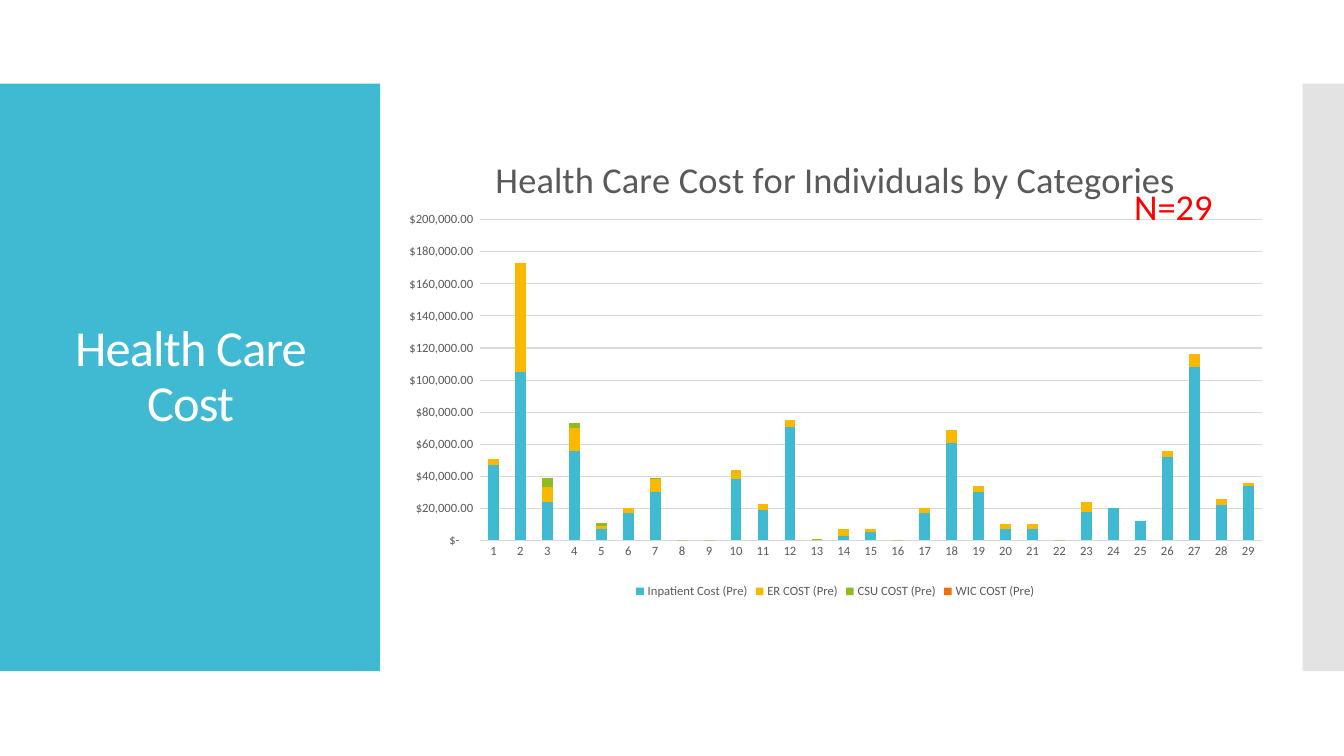
from lxml import etree
from pptx import Presentation
from pptx.chart.data import CategoryChartData
from pptx.dml.color import RGBColor
from pptx.enum.chart import XL_CHART_TYPE as CT, XL_LEGEND_POSITION as LP, XL_TICK_MARK as TM
from pptx.enum.shapes import MSO_SHAPE
from pptx.enum.text import MSO_ANCHOR, MSO_AUTO_SIZE, PP_ALIGN
from pptx.oxml.ns import qn
from pptx.util import Inches, Pt

COLORS = {
    "teal": "40BAD2", "amber": "FAB900", "green": "90BB23", "orange": "EE7008",
    "grey": "C8C8C8", "grid": "D9D9D9", "text": "595959", "red": "FF0000", "white": "FFFFFF",
}
FONT = "Calibri"
MONEY = r'_("$"* #,##0.00_);_("$"* \(#,##0.00\);_("$"* "-"??_);_(@_)'
PEOPLE = 29
INPATIENT = [47, 105, 24, 56, 7, 17, 30, 0, 0, 38, 19, 71, 0, 3, 5, 0, 17, 61, 30,
             7, 7, 0, 18, 20, 12, 52, 108, 22, 34]
EMERGENCY = [4, 68, 9, 14, 2, 3, 8, 0, 0, 6, 4, 4, 0, 4, 2, 0, 3, 8, 4,
             3, 3, 0, 6, 0, 0, 4, 8, 4, 2]
CRISIS_UNIT = {3: 6, 4: 3, 5: 2, 7: 1, 13: 1}
COSTS = [
    ("Inpatient Cost (Pre)", "teal", INPATIENT),
    ("ER COST (Pre)", "amber", EMERGENCY),
    ("CSU COST (Pre)", "green", [CRISIS_UNIT.get(n, 0) for n in range(1, PEOPLE + 1)]),
    ("WIC COST (Pre)", "orange", [0] * PEOPLE),
]


def rgb(name):
    return RGBColor.from_string(COLORS[name])


def style_font(font, size, color):
    font.name, font.size, font.bold = FONT, Pt(size), False
    font.color.rgb = rgb(color)


def add_panel(slide, left, width, color, alpha=None):
    sp = slide.shapes.add_shape(MSO_SHAPE.RECTANGLE, Inches(left), Inches(0.83),
                                Inches(width), Inches(5.83))
    sp.shadow.inherit = False
    sp.fill.solid()
    sp.fill.fore_color.rgb = rgb(color)
    sp.line.fill.background()
    if alpha:
        fill = sp._element.spPr.find(".//" + qn("a:srgbClr"))
        etree.SubElement(fill, qn("a:alpha")).set("val", str(alpha * 1000))


def set_title(slide, text):
    title = slide.shapes.title
    title.left, title.top = Inches(0.28), Inches(1.23)
    title.width, title.height = Inches(3.22), Inches(5.03)
    tf = title.text_frame
    tf.text = text
    tf.word_wrap = True
    tf.vertical_anchor = MSO_ANCHOR.MIDDLE
    p = tf.paragraphs[0]
    p.alignment, p.line_spacing = PP_ALIGN.CENTER, 0.9
    r = p.runs[0]
    style_font(r.font, 36, "white")
    r.font._element.set("spc", "-60")
    slide.shapes._spTree.append(title._element)


def add_label(slide, text):
    sp = slide.shapes.add_textbox(Inches(11.15), Inches(1.78), Inches(1.02), Inches(0.54))
    tf = sp.text_frame
    tf.text = text
    tf.word_wrap = False
    tf.auto_size = MSO_AUTO_SIZE.SHAPE_TO_FIT_TEXT
    style_font(tf.paragraphs[0].runs[0].font, 26, "red")


def set_layout(element, index, **settings):
    for old in element.findall(qn("c:layout")):
        element.remove(old)
    layout = etree.Element(qn("c:layout"))
    manual = etree.SubElement(layout, qn("c:manualLayout"))
    for tag, value in settings.items():
        etree.SubElement(manual, qn("c:" + tag)).set("val", str(value))
    element.insert(index, layout)


def format_axes(chart):
    for axis in (chart.category_axis, chart.value_axis):
        axis.major_tick_mark = axis.minor_tick_mark = TM.NONE
        style_font(axis.tick_labels.font, 9, "text")
    values = chart.value_axis
    values.minimum_scale, values.maximum_scale, values.major_unit = 0, 200000, 20000
    values.tick_labels.number_format = MONEY
    values.tick_labels.number_format_is_linked = False
    values.format.line.fill.background()
    for line in (chart.category_axis.format.line, values.major_gridlines.format.line):
        line.color.rgb = rgb("grid")
        line.width = Pt(0.75)


def add_cost_chart(slide, heading):
    data = CategoryChartData(number_format=MONEY)
    data.categories = [str(n) for n in range(1, PEOPLE + 1)]
    for name, _, thousands in COSTS:
        data.add_series(name, [v * 1000 for v in thousands])
    chart = slide.shapes.add_chart(CT.COLUMN_STACKED, Inches(3.88), Inches(1.23),
                                   Inches(8.81), Inches(4.75), data).chart
    chart.font.name, chart.font.size = FONT, Pt(10)
    tf = chart.chart_title.text_frame
    tf.text = heading
    style_font(tf.paragraphs[0].runs[0].font, 26, "text")
    set_layout(chart.chart_title._element, 1, xMode="edge", yMode="edge", x=0.11, y=0.05)
    chart.has_legend = True
    chart.legend.position = LP.BOTTOM
    chart.legend.include_in_layout = False
    style_font(chart.legend.font, 9, "text")
    format_axes(chart)
    plot = chart.plots[0]
    plot.gap_width, plot.overlap, plot.vary_by_categories = 150, 100, False
    for series, (_, color, _) in zip(plot.series, COSTS):
        series.format.fill.solid()
        series.format.fill.fore_color.rgb = rgb(color)
    set_layout(chart._chartSpace.chart.plotArea, 0, layoutTarget="inner", xMode="edge",
               yMode="edge", x=0.1, y=0.2, w=0.88, h=0.67)


def main():
    """Build the health care cost slide."""
    prs = Presentation()
    prs.slide_width, prs.slide_height = Inches(13.33), Inches(7.5)
    slide = prs.slides.add_slide(prs.slide_layouts[5])
    add_panel(slide, 0, 3.77, "teal")
    add_panel(slide, 12.92, 0.41, "grey", alpha=50)
    set_title(slide, "Health Care Cost")
    add_cost_chart(slide, "Health Care Cost for Individuals by Categories")
    add_label(slide, f"N={PEOPLE}")
    prs.save("out.pptx")


if __name__ == "__main__":
    main()
